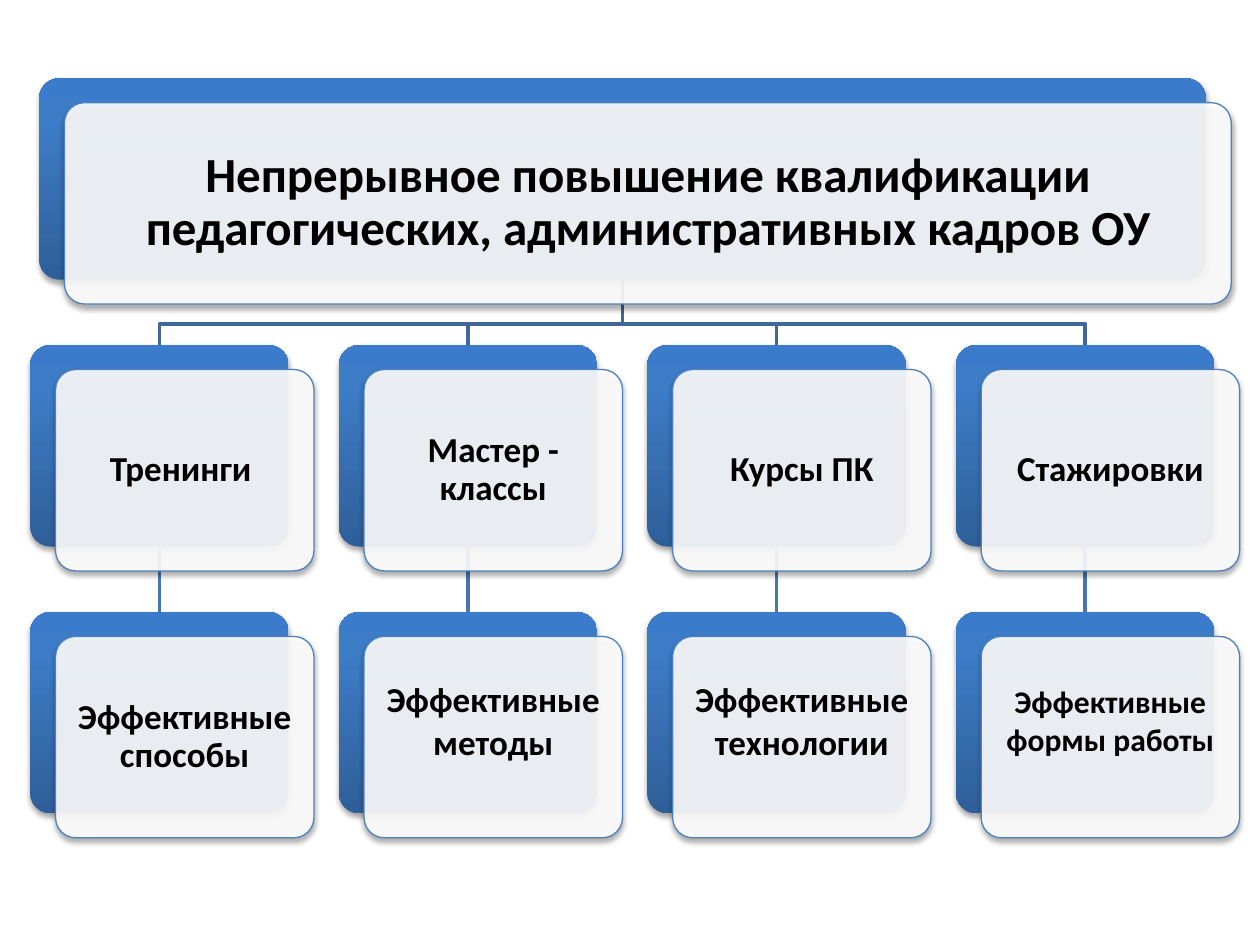
from pptx import Presentation
from pptx.dml.color import RGBColor as RGB
from pptx.enum.shapes import MSO_CONNECTOR as Conn, MSO_SHAPE as Kind
from pptx.enum.text import MSO_ANCHOR as Anchor, MSO_AUTO_SIZE as Auto, PP_ALIGN as Align
from pptx.oxml import parse_xml
from pptx.oxml.ns import nsdecls
from pptx.util import Cm, Pt

BLACK = RGB(0x00, 0x00, 0x00)
WHITE = RGB(0xFF, 0xFF, 0xFF)
DEEP = RGB(0x2F, 0x5F, 0x99)
MID = RGB(0x3D, 0x7C, 0xC7)
BRIGHT = RGB(0x3A, 0x7C, 0xCB)
EDGE = RGB(0x4F, 0x81, 0xBD)
TREE = RGB(0x3F, 0x67, 0x97)
LINK = RGB(0x48, 0x75, 0xAC)

# Grid, in cm
TOP, ROW, HIGH = 1.58, 5.38, 4.06
LEFT, COL, WIDE = 0.61, 6.22, 5.21
ROOT_X, ROOT_W = 0.79, 23.52
DX, DY = 0.51, 0.49  # front card against back card
BEND = 0.89          # from the root card down to the branch bar
LIFT = 0.69          # extra bottom inset that raises a text

HEAD = "Непрерывное повышение квалификации педагогических, административных кадров ОУ"
# Text, size, line spacing, inset, lift
ROWS = [
    [("Тренинги ", 20, 0.9, 0.2, 0),
     ("Мастер - классы", 20, 0.9, 0.2, 0),
     ("Курсы ПК", 20, 0.9, 0.2, 0),
     ("Стажировки", 20, 0.9, 0.2, 0)],
    [("Эффективные способы", 20, 0.9, 0.2, 0),
     ("Эффективные методы", 20, 1.0, 0.2, LIFT),
     ("Эффективные технологии", 20, 1.0, 0.2, LIFT),
     ("Эффективные формы работы", 18, 1.0, 0.18, LIFT)],
]


def apply(item, values):
    for name, value in values.items():
        setattr(item, name, value)


def shade(shape):
    """Soft shadow below a card."""
    shape.shadow.inherit = False
    shape.element.spPr.find("{*}effectLst").append(parse_xml(
        f'<a:outerShdw {nsdecls("a")} blurRad="40000" dist="23000" dir="5400000" '
        f'rotWithShape="0"><a:srgbClr val="{BLACK}"><a:alpha val="35000"/>'
        '</a:srgbClr></a:outerShdw>'))


def add_card(slide, x, y, wide):
    card = slide.shapes.add_shape(
        Kind.ROUNDED_RECTANGLE, Cm(x), Cm(y), Cm(wide), Cm(HIGH))
    card.adjustments[0] = 0.1
    shade(card)
    return card


def add_back(slide, x, y, wide):
    """Blue card with a three-stop gradient, dark at the bottom."""
    card = add_card(slide, x, y, wide)
    stops = "".join(
        f'<a:gs pos="{pos}"><a:srgbClr val="{tone}"/></a:gs>'
        for pos, tone in ((0, DEEP), (80000, MID), (100000, BRIGHT)))
    card.element.spPr.insert(2, parse_xml(
        f'<a:gradFill {nsdecls("a")} rotWithShape="1"><a:gsLst>{stops}</a:gsLst>'
        '<a:lin ang="16200000" scaled="0"/></a:gradFill>'))
    card.line.fill.background()
    return card


def add_front(slide, x, y, wide):
    """White card that lets a little of the blue one through."""
    card = add_card(slide, x + DX, y + DY, wide)
    card.fill.solid()
    card.fill.fore_color.rgb = WHITE
    card.element.spPr.find("{*}solidFill")[0].append(
        parse_xml(f'<a:alpha {nsdecls("a")} val="90000"/>'))
    card.line.color.rgb = EDGE
    card.line.width = Pt(0.75)
    return card


def set_text(shape, text, size, space, inset, lift=0):
    frame = shape.text_frame
    apply(frame, dict(
        text=text, word_wrap=True, auto_size=Auto.NONE,
        vertical_anchor=Anchor.MIDDLE,
        margin_left=Cm(inset), margin_right=Cm(inset),
        margin_top=Cm(inset), margin_bottom=Cm(inset + lift)))
    para = frame.paragraphs[0]
    apply(para, dict(alignment=Align.CENTER, line_spacing=space))
    font = para.runs[0].font
    apply(font, dict(name="Calibri", size=Pt(size), bold=True))
    font.color.rgb = BLACK


def add_branch(slide, root, card):
    """Bent line from the root card to a card of the first row."""
    mid = root.left + root.width // 2
    low = root.top + root.height
    bar = low + Cm(BEND)
    end = card.left + card.width // 2
    form = slide.shapes.build_freeform(mid, low)
    form.add_line_segments([(mid, bar), (end, bar), (end, card.top)], close=False)
    line = form.convert_to_shape()
    line.fill.background()
    line.shadow.inherit = False
    line.line.color.rgb = TREE
    line.line.width = Pt(2)


def add_link(slide, upper, lower):
    """Straight line between two cards of one column."""
    link = slide.shapes.add_connector(Conn.STRAIGHT, 0, 0, 0, 0)
    link.begin_connect(upper, 2)
    link.end_connect(lower, 0)
    link.line.color.rgb = LINK
    link.line.width = Pt(2)
    link.element.spPr.append(parse_xml(f'<a:effectLst {nsdecls("a")}/>'))


def main():
    deck = Presentation()
    apply(deck, dict(slide_width=Cm(25.4), slide_height=Cm(19.05)))
    slide = deck.slides.add_slide(deck.slide_layouts[5])

    # Back cards
    spots = [[(LEFT + COL * col, TOP + ROW * (row + 1), WIDE)
              for col in range(len(cells))] for row, cells in enumerate(ROWS)]
    root = add_back(slide, ROOT_X, TOP, ROOT_W)
    backs = [[add_back(slide, *spot) for spot in line] for line in spots]

    # Lines of the tree
    for upper, lower in zip(*backs):
        add_link(slide, upper, lower)
        add_branch(slide, root, upper)

    # Front cards with their texts
    front = add_front(slide, ROOT_X, TOP, ROOT_W)
    for line, cells in zip(spots, ROWS):
        for spot, cell in zip(line, cells):
            set_text(add_front(slide, *spot), *cell)

    # Title on top of the root card
    title = slide.shapes.title
    apply(title, dict(left=front.left, top=front.top,
                      width=front.width, height=front.height))
    set_text(title, HEAD, 28, 0.9, 0.3)
    slide.shapes.element.append(title.element)

    deck.save("out.pptx")


if __name__ == "__main__":
    main()
